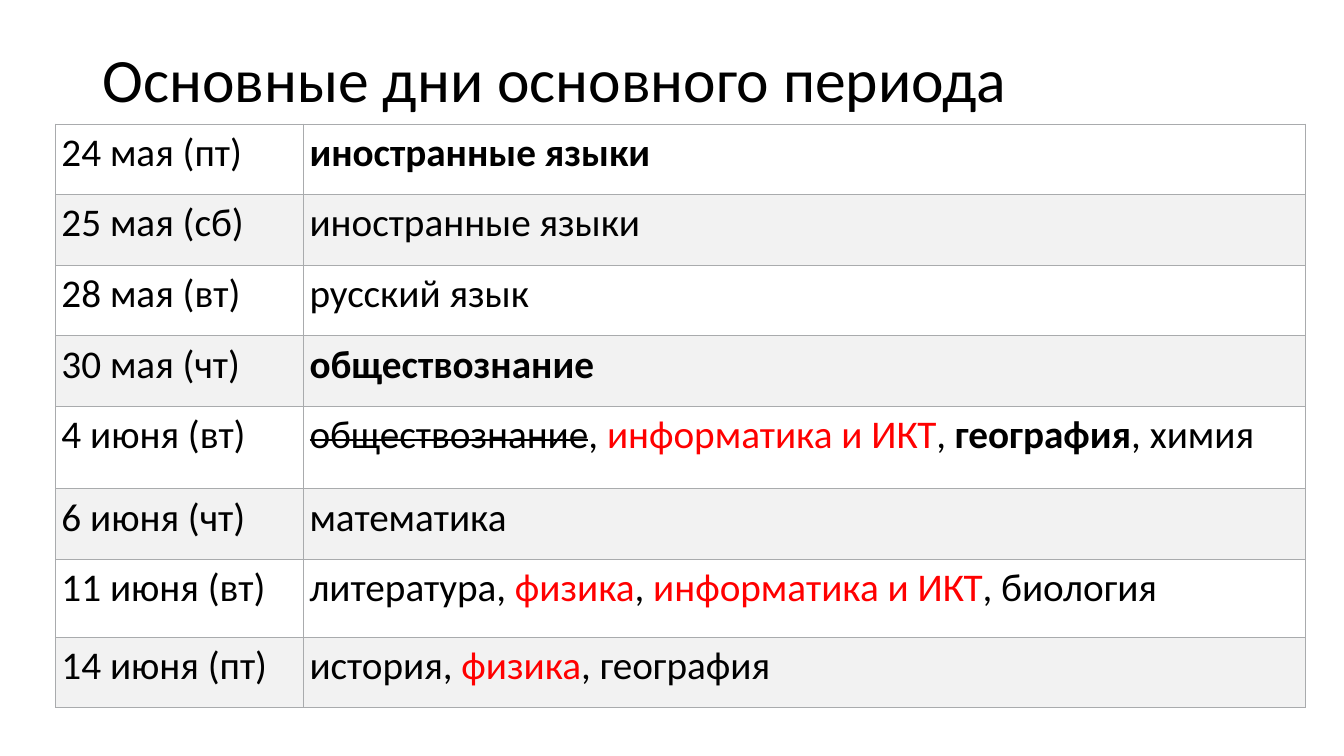
from lxml import etree
from pptx import Presentation
from pptx.dml.color import RGBColor
from pptx.enum.text import MSO_ANCHOR, MSO_AUTO_SIZE, PP_ALIGN
from pptx.oxml.ns import qn
from pptx.util import Inches, Pt

LEFT = PP_ALIGN.LEFT
MIDDLE = MSO_ANCHOR.MIDDLE
NO_FIT = MSO_AUTO_SIZE.NONE

FONT = "Calibri"
COLORS = {"text": "000000", "new": "FF0000", "odd": "FFFFFF",
          "even": "F2F2F2", "line": "A9ABAD"}

TITLE = "Основные дни основного периода"
# Each exam day: date, row height, subjects with their style
DAYS = [
    ("24 мая (пт)", 0.7, [("иностранные языки", "bold")]),
    ("25 мая (сб)", 0.7, [("иностранные языки", "")]),
    ("28 мая (вт)", 0.7, [("русский язык", "")]),
    ("30 мая (чт)", 0.7, [("обществознание", "bold")]),
    ("4 июня (вт)", 0.82, [("обществознание", "strike"), (", ", ""),
                           ("информатика и ИКТ", "new"), (", ", ""),
                           ("география", "bold"), (", химия", "")]),
    ("6 июня (чт)", 0.7, [("математика", "")]),
    ("11 июня (вт)", 0.77, [("литература, ", ""), ("физика", "new"),
                            (", ", ""), ("информатика и ИКТ", "new"),
                            (", биология", "")]),
    ("14 июня (пт)", 0.7, [("история, ", ""), ("физика", "new"),
                           (", география", "")]),
]


def color(name):
    return RGBColor.from_string(COLORS[name])


def add_run(para, text, size, style=""):
    run = para.add_run()
    run.text = text
    font = run.font
    font.name = FONT
    font.size = Pt(size)
    font.bold = style == "bold"
    font.color.rgb = color("new" if style == "new" else "text")
    if style == "strike":
        run._r.get_or_add_rPr().set("strike", "sngStrike")


def add_borders(cell):
    props = cell._tc.get_or_add_tcPr()
    for side in ("lnL", "lnR", "lnT", "lnB"):
        line = etree.SubElement(props, qn(f"a:{side}"), w=str(Pt(0.75)))
        fill = etree.SubElement(line, qn("a:solidFill"))
        etree.SubElement(fill, qn("a:srgbClr"), val=COLORS["line"])


def fill_cell(cell, parts, shade):
    add_borders(cell)
    cell.fill.solid()
    cell.fill.fore_color.rgb = color(shade)
    cell.margin_left = cell.margin_right = Inches(0.06)
    cell.margin_top = cell.margin_bottom = Inches(0.05)
    para = cell.text_frame.paragraphs[0]
    for text, style in parts:
        add_run(para, text, 28, style)


def add_title(slide, left, top, width, height):
    title = slide.shapes.title
    title.left, title.top = Inches(left), Inches(top)
    title.width, title.height = Inches(width), Inches(height)
    frame = title.text_frame
    frame.auto_size = NO_FIT
    frame.word_wrap = True
    frame.vertical_anchor = MIDDLE
    para = frame.paragraphs[0]
    para.alignment = LEFT
    para.line_spacing = 0.9
    add_run(para, TITLE, 44)


def add_days(slide, left, top, width, dates):
    """Draw the exam table; dates is the width of the date column."""
    height = sum(day[1] for day in DAYS)
    table = slide.shapes.add_table(len(DAYS), 2, Inches(left), Inches(top),
                                   Inches(width), Inches(height)).table
    table.columns[0].width = Inches(dates)
    table.columns[1].width = Inches(width - dates)
    for i, (date, tall, subjects) in enumerate(DAYS):
        table.rows[i].height = Inches(tall)
        shade = "even" if i % 2 else "odd"
        fill_cell(table.cell(i, 0), [(date, "")], shade)
        fill_cell(table.cell(i, 1), subjects, shade)


def main():
    deck = Presentation()
    deck.slide_width, deck.slide_height = Inches(13.33), Inches(7.5)
    slide = deck.slides.add_slide(deck.slide_layouts[5])
    add_title(slide, 0.92, 0.4, 11.5, 0.83)
    add_days(slide, 0.55, 1.23, 12.4, 2.46)
    deck.save("out.pptx")


if __name__ == "__main__":
    main()
